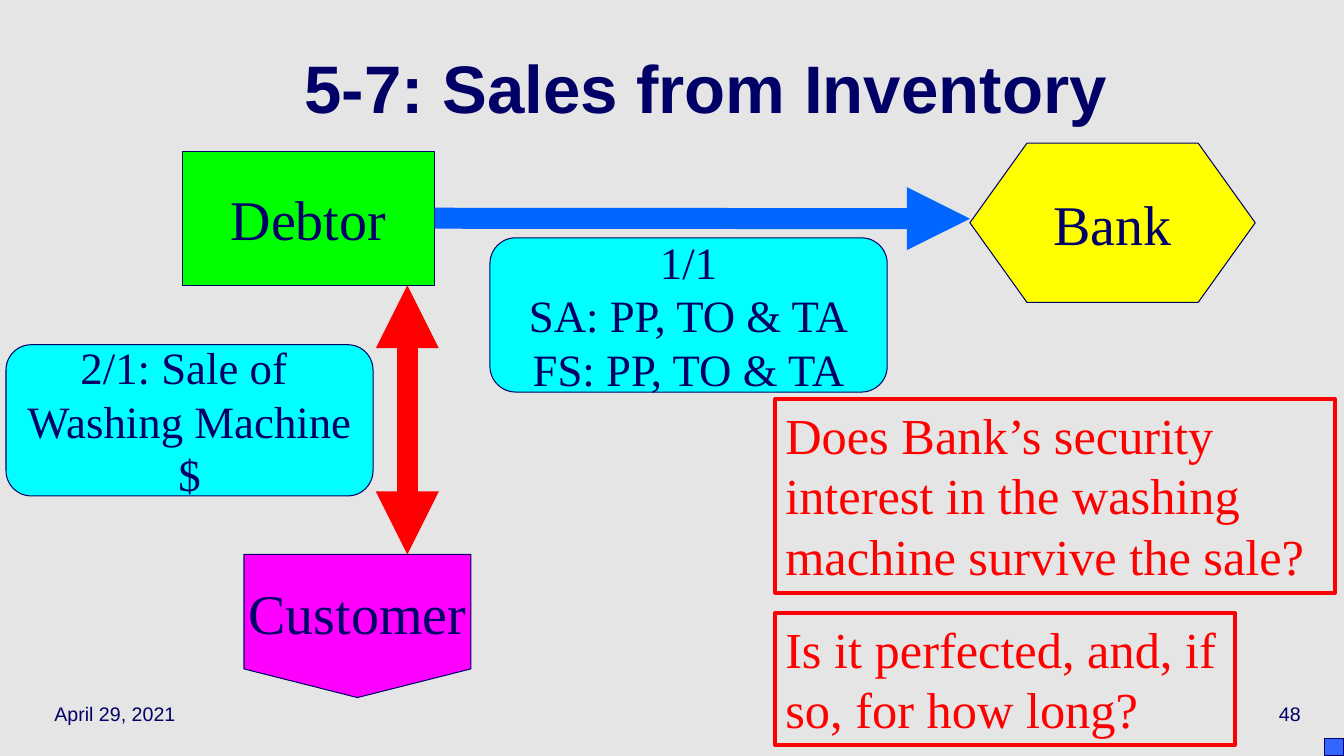
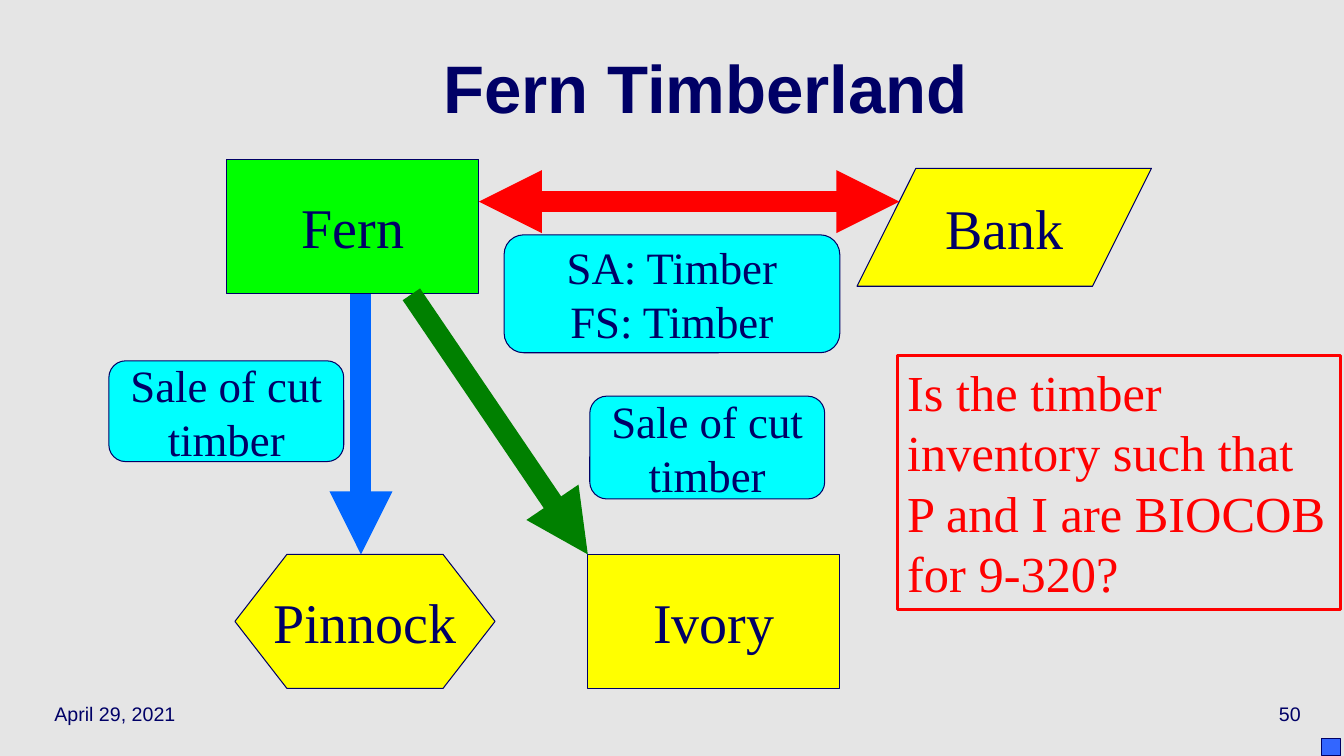
from lxml import etree
from pptx import Presentation
from pptx.dml.color import RGBColor
from pptx.enum.shapes import MSO_CONNECTOR, MSO_SHAPE
from pptx.enum.text import MSO_ANCHOR, PP_ALIGN
from pptx.oxml.ns import qn
from pptx.util import Inches, Pt

# Shared style
NAVY = RGBColor(0x00, 0x00, 0x66)
GREY = RGBColor(0xE5, 0xE5, 0xE5)
LIME = RGBColor(0x00, 0xFF, 0x00)
YELLOW = RGBColor(0xFF, 0xFF, 0x00)
CYAN = RGBColor(0x00, 0xFF, 0xFF)
MAGENTA = RGBColor(0xFF, 0x00, 0xFF)
RED = RGBColor(0xFF, 0x00, 0x00)
BLUE = RGBColor(0x00, 0x66, 0xFF)
GREEN = RGBColor(0x00, 0x80, 0x00)
CORNER_BLUE = RGBColor(0x33, 0x66, 0xFF)
SANS, SERIF = "Arial", "Times New Roman"
DATE = "April 29, 2021"

PROCESS = MSO_SHAPE.FLOWCHART_PROCESS
HEXAGON = MSO_SHAPE.FLOWCHART_PREPARATION
SLANTED = MSO_SHAPE.FLOWCHART_DATA
PENTAGON = MSO_SHAPE.FLOWCHART_OFFPAGE_CONNECTOR
ROUNDED = MSO_SHAPE.FLOWCHART_ALTERNATE_PROCESS

# Content: places are (left, top, width, height) in inches
# parties: name, preset, fill, place
# arrows: start, end, colour, two-headed, party whose right side it leaves
# labels: lines, place, wraps
# questions: text, place, border width
SLIDES = [
    {
        "title": "5‑7: Sales from Inventory",
        "number": "48",
        "corner_left": 13.14,
        "parties": [
            ("Debtor", PROCESS, LIME, (1.81, 1.5, 2.5, 1.33)),
            ("Bank", HEXAGON, YELLOW, (9.62, 1.42, 2.83, 1.58)),
            ("Customer", PENTAGON, MAGENTA, (2.42, 5.5, 2.25, 1.42)),
        ],
        "arrows": [
            ((4.31, 2.17), (9.62, 2.17), BLUE, False, "Debtor"),
            ((4.04, 2.83), (4.04, 5.5), RED, True, None),
        ],
        "labels": [
            (["1/1", "SA: PP, TO & TA", "FS: PP, TO & TA"],
             (4.86, 2.36, 3.94, 1.53), False),
            (["2/1: Sale of ", "Washing Machine", "$"],
             (0.06, 3.42, 3.64, 1.5), False),
        ],
        "questions": [
            ("Does Bank’s security interest in the washing machine "
             "survive the sale?", (7.69, 3.96, 5.55, 1.92), 3),
            ("Is it perfected, and, if so, for how long?",
             (7.69, 6.08, 4.56, 1.31), 3),
        ],
    },
    {
        "title": "Fern Timberland",
        "number": "50",
        "corner_left": 13.11,
        "parties": [
            ("Bank", SLANTED, YELLOW, (8.5, 1.67, 2.92, 1.17)),
            ("Fern", PROCESS, LIME, (2.25, 1.58, 2.5, 1.33)),
            ("Pinnock", HEXAGON, YELLOW, (2.33, 5.5, 2.58, 1.33)),
            ("Ivory", PROCESS, YELLOW, (5.83, 5.5, 2.5, 1.33)),
        ],
        "arrows": [
            ((4.75, 2), (8.92, 2), RED, True, None),
            ((3.58, 2.92), (3.58, 5.5), BLUE, False, None),
            ((4.08, 2.92), (5.83, 5.5), GREEN, False, None),
        ],
        "labels": [
            (["SA: Timber", "FS: Timber"], (5, 2.33, 3.33, 1.17), False),
            (["Sale of cut timber"], (1.08, 3.58, 2.33, 1), True),
            (["Sale of cut timber"], (5.85, 3.93, 2.33, 1.02), True),
        ],
        "questions": [
            ("Is the timber inventory such that P and I are BIOCOB "
             "for 9-320?", (8.9, 3.53, 4.4, 2.52), 2),
        ],
    },
]


def write(box, lines, size, font=SERIF, color=NAVY, align=PP_ALIGN.CENTER,
          anchor=MSO_ANCHOR.MIDDLE, wrap=True, bold=False, spacing=None):
    frame = box.text_frame
    frame.word_wrap = wrap
    frame.vertical_anchor = anchor
    for index, line in enumerate(lines):
        para = frame.add_paragraph() if index else frame.paragraphs[0]
        para.alignment = align
        if spacing:
            para.line_spacing = spacing
        span = para.add_run()
        span.text = line
        span.font.name, span.font.size = font, Pt(size)
        span.font.color.rgb, span.font.bold = color, bold


def add_text(page, place, text, size, **style):
    box = page.shapes.add_textbox(*map(Inches, place))
    write(box, [text], size, font=SANS, **style)


def add_box(page, preset, place, fill=None, border=NAVY, border_width=0.75):
    box = page.shapes.add_shape(preset, *map(Inches, place))
    box.shadow.inherit = False
    if fill is None:
        box.fill.background()
    else:
        box.fill.solid()
        box.fill.fore_color.rgb = fill
    box.line.color.rgb = border
    box.line.width = Pt(border_width)
    return box


def add_arrow(page, start, end, color, two_headed, source=None):
    arrow = page.shapes.add_connector(
        MSO_CONNECTOR.STRAIGHT, *map(Inches, start + end))
    if source is not None:
        arrow.begin_connect(source, 3)
    arrow.line.color.rgb = color
    arrow.line.width = Pt(15)
    outline = arrow.line._get_or_add_ln()
    for tag in ("a:headEnd", "a:tailEnd") if two_headed else ("a:tailEnd",):
        etree.SubElement(outline, qn(tag), type="triangle")
    etree.SubElement(arrow._element.spPr, qn("a:effectLst"))


def add_frame(page, content):
    """Background, title, footer and corner square."""
    page.background.fill.solid()
    page.background.fill.fore_color.rgb = GREY
    add_text(page, (0.44, 6.83, 2.78, 0.5), DATE, 14, align=PP_ALIGN.LEFT)
    add_text(page, (10.22, 6.83, 2.78, 0.5), content["number"], 14,
             align=PP_ALIGN.RIGHT)
    add_text(page, (0.89, 0.33, 12.22, 1.25), content["title"], 48,
             bold=True, spacing=0.7)
    add_box(page, MSO_SHAPE.RECTANGLE,
            (content["corner_left"], 7.33, 0.19, 0.17), CORNER_BLUE)


def build_slide(deck, content):
    page = deck.slides.add_slide(deck.slide_layouts[6])
    add_frame(page, content)

    # Parties
    parties = {}
    for name, preset, fill, place in content["parties"]:
        parties[name] = add_box(page, preset, place, fill)
        write(parties[name], [name], 40, wrap=False)

    # Transactions and their labels
    for start, end, color, two_headed, source in content["arrows"]:
        add_arrow(page, start, end, color, two_headed, parties.get(source))
    for lines, place, wrap in content["labels"]:
        write(add_box(page, ROUNDED, place, CYAN), lines, 32, wrap=wrap)

    # Questions
    for text, place, border_width in content["questions"]:
        box = add_box(page, MSO_SHAPE.RECTANGLE, place, None, RED, border_width)
        write(box, [text], 36, color=RED, align=PP_ALIGN.LEFT,
              anchor=MSO_ANCHOR.TOP)


def main():
    deck = Presentation()
    deck.slide_width, deck.slide_height = Inches(13.33), Inches(7.5)
    for content in SLIDES:
        build_slide(deck, content)
    deck.save("out.pptx")


if __name__ == "__main__":
    main()
